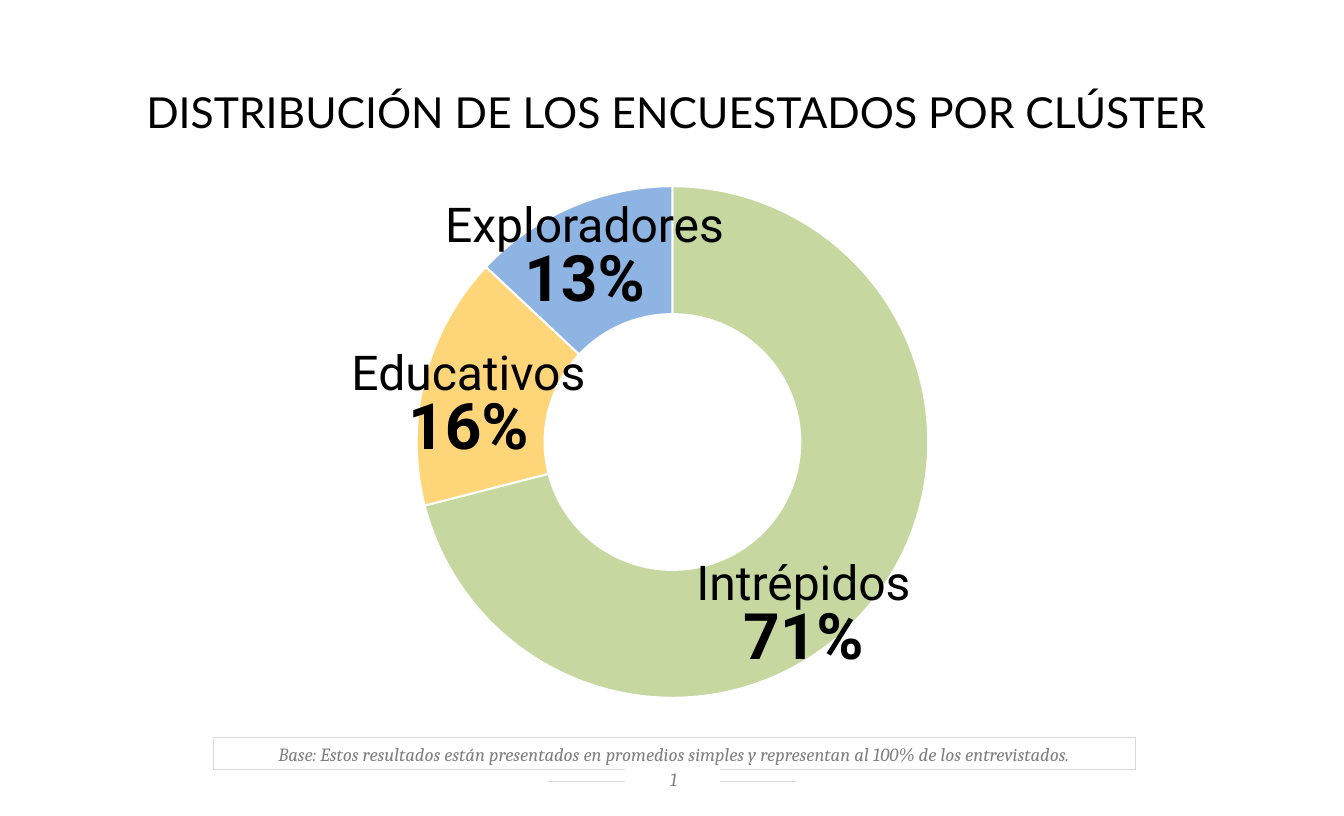
from dataclasses import dataclass

from lxml import etree
from pptx import Presentation
from pptx.chart.data import CategoryChartData
from pptx.dml.color import RGBColor
from pptx.enum.chart import XL_CHART_TYPE
from pptx.enum.shapes import MSO_CONNECTOR, MSO_SHAPE
from pptx.enum.text import MSO_ANCHOR, MSO_AUTO_SIZE, PP_ALIGN
from pptx.oxml.ns import qn
from pptx.oxml.xmlchemy import OxmlElement
from pptx.slide import Slide
from pptx.util import Inches, Pt

DOUGHNUT = XL_CHART_TYPE.DOUGHNUT
STRAIGHT = MSO_CONNECTOR.STRAIGHT
RECTANGLE = MSO_SHAPE.RECTANGLE
CENTER = PP_ALIGN.CENTER
TOP, MIDDLE, BOTTOM = MSO_ANCHOR.TOP, MSO_ANCHOR.MIDDLE, MSO_ANCHOR.BOTTOM
NO_AUTOFIT = MSO_AUTO_SIZE.NONE

TITLE_ONLY = 5
COLORS = {
    "text": "000000",
    "note": "808080",
    "rule": "D9D9D9",
    "white": "FFFFFF",
    "green": "C6D8A0",
    "yellow": "FFD579",
    "blue": "8EB4E3",
}


@dataclass(frozen=True)
class Box:
    left: float
    top: float
    width: float
    height: float

    def lengths(self) -> tuple:
        return tuple(Inches(v) for v in (self.left, self.top, self.width, self.height))


@dataclass(frozen=True)
class Cluster:
    name: str
    share: int
    color: str
    left: float
    top: float


CLUSTERS = [
    Cluster("Intrépidos", 71, "green", 6.51, 5.82),
    Cluster("Educativos", 16, "yellow", 3.02, 3.63),
    Cluster("Exploradores", 13, "blue", 4.23, 2.09),
]
CHART_BOX = Box(2.26, 1.79, 9.49, 5.63)
RING_SIZE = 5.33
HOLE_PERCENT = 61


def color(name: str) -> RGBColor:
    return RGBColor.from_string(COLORS[name])


def add_span(para, text: str, font: str, size: float, tint: str = "text",
             bold: bool = False, italic: bool = False) -> None:
    para.alignment = CENTER
    span = para.add_run()
    span.text = text
    span.font.name = font
    span.font.size = Pt(size)
    span.font.bold = bold
    span.font.italic = italic
    span.font.color.rgb = color(tint)


def set_margins(frame, left: float, top: float, right: float, bottom: float) -> None:
    frame.margin_left, frame.margin_top = Inches(left), Inches(top)
    frame.margin_right, frame.margin_bottom = Inches(right), Inches(bottom)


def add_title(page: Slide, text: str) -> None:
    title = page.shapes.title
    title.left, title.top, title.width, title.height = Box(0, 0.82, 14, 0.68).lengths()
    frame = title.text_frame
    frame.word_wrap = True
    frame.auto_size = NO_AUTOFIT
    frame.vertical_anchor = TOP
    set_margins(frame, 0.24, 0.07, 0.14, 0.07)
    add_span(frame.paragraphs[0], text, "Lato", 32)


def add_rule(page: Slide, start: float, end: float, top: float) -> None:
    rule = page.shapes.add_connector(
        STRAIGHT, Inches(start), Inches(top), Inches(end), Inches(top))
    rule.line.color.rgb = color("rule")
    rule.line.width = Pt(0.5)
    etree.SubElement(rule._element.spPr, qn("a:effectLst"))


def add_note(page: Slide, box: Box, text: str, anchor):
    note = page.shapes.add_shape(RECTANGLE, *box.lengths())
    note.shadow.inherit = False
    note.fill.background()
    note.line.fill.background()
    frame = note.text_frame
    frame.word_wrap = True
    frame.vertical_anchor = anchor
    add_span(frame.paragraphs[0], text, "Cambria", 14, "note", italic=True)
    return note


def add_footer(page: Slide) -> None:
    add_rule(page, 5.71, 8.29, 8.14)
    base = add_note(
        page, Box(2.22, 7.68, 9.61, 0.34),
        "Base: Estos resultados están presentados en promedios simples "
        "y representan al 100% de los entrevistados.", BOTTOM)
    base.line.color.rgb = color("rule")
    base.line.width = Pt(0.75)
    number = add_note(page, Box(6.51, 7.98, 0.99, 0.29), "1", MIDDLE)
    number.fill.solid()
    number.fill.fore_color.rgb = color("white")
    set_margins(number.text_frame, 0.12, 0.02, 0.1, 0.05)


def place_ring(chart) -> None:
    plot_area = chart._chartSpace.chart.plotArea
    for old in plot_area.findall(qn("c:layout")):
        plot_area.remove(old)
    layout = OxmlElement("c:layout")
    plot_area.insert(0, layout)
    manual = etree.SubElement(layout, qn("c:manualLayout"))
    width, height = RING_SIZE / CHART_BOX.width, RING_SIZE / CHART_BOX.height
    settings = {
        "layoutTarget": "inner", "xMode": "edge", "yMode": "edge",
        "x": (1 - width) / 2, "y": (1 - height) / 2, "w": width, "h": height,
    }
    for tag, value in settings.items():
        etree.SubElement(manual, qn(f"c:{tag}")).set("val", str(value))
    plot_area.find(".//" + qn("c:holeSize")).set("val", str(HOLE_PERCENT))


def add_ring_chart(page: Slide) -> None:
    data = CategoryChartData()
    data.categories = [str(i) for i in range(1, len(CLUSTERS) + 1)]
    data.add_series("Series 1", [cluster.share for cluster in CLUSTERS])
    chart = page.shapes.add_chart(DOUGHNUT, *CHART_BOX.lengths(), data).chart
    chart.has_legend = False
    chart.has_title = False
    chart.font.name = "Calibri"
    chart.font.size = Pt(10)
    chart.font.color.rgb = color("text")
    plot = chart.plots[0]
    plot.vary_by_categories = True
    for index, cluster in enumerate(CLUSTERS):
        style = plot.series[0].points[index].format
        style.fill.solid()
        style.fill.fore_color.rgb = color(cluster.color)
        style.line.color.rgb = color("white")
        style.line.width = Pt(1.5)
    place_ring(chart)


def add_label(page: Slide, cluster: Cluster) -> None:
    box = Box(cluster.left, cluster.top, 3.72, 1.25)
    frame = page.shapes.add_textbox(*box.lengths()).text_frame
    frame.word_wrap = True
    name, share = frame.paragraphs[0], frame.add_paragraph()
    name.line_spacing = share.line_spacing = 0.81
    add_span(name, cluster.name, "Roboto", 36)
    add_span(share, f"{cluster.share}%", "Roboto", 48, bold=True)


def main() -> None:
    deck = Presentation()
    deck.slide_width, deck.slide_height = Inches(14), Inches(8.5)
    page = deck.slides.add_slide(deck.slide_layouts[TITLE_ONLY])
    add_title(page, "DISTRIBUCIÓN DE LOS ENCUESTADOS POR CLÚSTER")
    add_footer(page)
    add_ring_chart(page)
    for cluster in CLUSTERS:
        add_label(page, cluster)
    deck.save("out.pptx")


if __name__ == "__main__":
    main()
